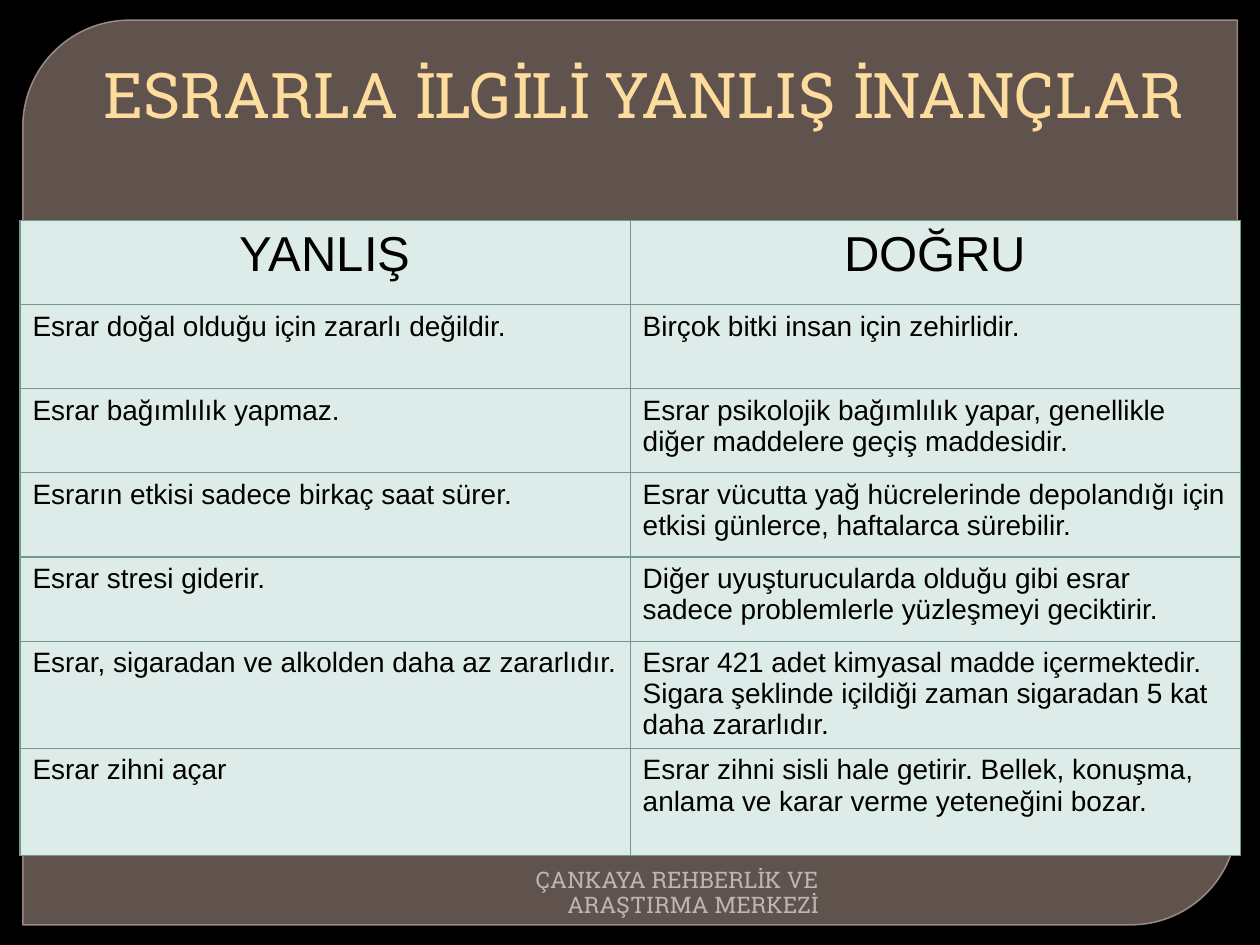
"""Build the slide on false beliefs about cannabis and the facts."""
from dataclasses import dataclass

import lxml.etree
import pptx
import pptx.dml.color
import pptx.enum.shapes
import pptx.enum.text
import pptx.oxml.ns
import pptx.util

Pt = pptx.util.Pt
qn = pptx.oxml.ns.qn
ALIGN = pptx.enum.text.PP_ALIGN
ANCHOR = pptx.enum.text.MSO_ANCHOR


@dataclass(frozen=True)
class Style:
    font: str
    size: float
    color: str
    align: ALIGN


@dataclass(frozen=True)
class Belief:
    wrong: str
    right: str
    height: float
    style: Style


TITLE = Style("Roboto Slab", 36, "FDDC9E", ALIGN.RIGHT)
FOOTER = Style("Roboto Slab", 13, "C0B5B1", ALIGN.RIGHT)
HEAD = Style("Arial", 28, "000000", ALIGN.CENTER)
BODY = Style("Arial", 16, "000000", ALIGN.LEFT)

BELIEFS = [
    Belief("YANLIŞ", "DOĞRU", 48.1, HEAD),
    Belief("Esrar doğal olduğu için zararlı değildir.",
           "Birçok bitki insan için zehirlidir.", 48.1, BODY),
    Belief("Esrar bağımlılık yapmaz.",
           "Esrar psikolojik bağımlılık yapar, genellikle diğer maddelere geçiş maddesidir.",
           48.1, BODY),
    Belief("Esrarın etkisi sadece birkaç saat sürer.",
           "Esrar vücutta yağ hücrelerinde depolandığı için etkisi günlerce, "
           "haftalarca sürebilir.", 48.1, BODY),
    Belief("Esrar stresi giderir.",
           "Diğer uyuşturucularda olduğu gibi esrar sadece problemlerle yüzleşmeyi geciktirir.",
           48.1, BODY),
    Belief("Esrar, sigaradan ve alkolden daha az zararlıdır.",
           "Esrar 421 adet kimyasal madde içermektedir. Sigara şeklinde içildiği zaman "
           "sigaradan 5 kat daha zararlıdır.", 61.3, BODY),
    Belief("Esrar zihni açar",
           "Esrar zihni sisli hale getirir. Bellek, konuşma, anlama ve karar verme "
           "yeteneğini bozar.", 61.3, BODY),
]


def rgb(color: str) -> pptx.dml.color.RGBColor:
    return pptx.dml.color.RGBColor.from_string(color)


def paint(fill, color: str, alpha: int = 100) -> None:
    fill.solid()
    fill.fore_color.rgb = rgb(color)
    if alpha < 100:
        clr = fill._xPr.find(f"{qn('a:solidFill')}/{qn('a:srgbClr')}")
        lxml.etree.SubElement(clr, qn("a:alpha"), val=str(alpha * 1000))


def write(tf, text: str, style: Style):
    p = tf.paragraphs[0]
    p.alignment = style.align
    r = p.add_run()
    r.text = text
    r.font.name = style.font
    r.font.size = Pt(style.size)
    r.font.color.rgb = rgb(style.color)
    return p


def add_borders(cell, color: str, width: float) -> None:
    pr = cell._tc.get_or_add_tcPr()
    for i, side in enumerate(("lnL", "lnR", "lnT", "lnB")):
        ln = lxml.etree.Element(qn(f"a:{side}"), w=str(Pt(width)))
        fill = lxml.etree.SubElement(ln, qn("a:solidFill"))
        lxml.etree.SubElement(fill, qn("a:srgbClr"), val=color)
        pr.insert(i, ln)


def add_panel(s) -> None:
    sp = s.shapes.add_shape(pptx.enum.shapes.MSO_SHAPE.ROUND_2_DIAG_RECTANGLE,
                            Pt(13), Pt(11.5), Pt(694), Pt(517))
    sp.adjustments[0] = 0.118
    sp.adjustments[1] = 0
    sp.shadow.inherit = False
    paint(sp.fill, "948079", 65)
    paint(sp.line.fill, "A9948D", 88)
    sp.line.width = Pt(0.87)
    s.shapes._spTree.insert(2, sp._element)


def add_title(s, text: str) -> None:
    sp = s.shapes.title
    sp.left, sp.top, sp.width, sp.height = Pt(36), Pt(21.6), Pt(648), Pt(56.9)
    tf = sp.text_frame
    tf.word_wrap = True
    tf.auto_size = pptx.enum.text.MSO_AUTO_SIZE.NONE
    tf.vertical_anchor = ANCHOR.BOTTOM
    tf.margin_left = 0
    write(tf, text, TITLE)


def add_beliefs(s, beliefs: list[Belief]) -> None:
    height = sum(b.height for b in beliefs)
    tbl = s.shapes.add_table(len(beliefs), 2, Pt(11.4), Pt(126),
                             Pt(697.4), Pt(height)).table
    tbl.first_row = tbl.horz_banding = False
    for row, b in zip(tbl.rows, beliefs):
        row.height = Pt(b.height)
        for cell, text in zip(row.cells, (b.wrong, b.right)):
            paint(cell.fill, "DEECE9")
            add_borders(cell, "70988E", 0.75)
            write(cell.text_frame, text, b.style)


def add_footer(s, text: str) -> None:
    tf = s.shapes.add_textbox(Pt(246.2), Pt(491.8), Pt(228.2), Pt(37.4)).text_frame
    tf.word_wrap = True
    tf.vertical_anchor = ANCHOR.MIDDLE
    write(tf, text, FOOTER).line_spacing = 0.9


def main() -> None:
    prs = pptx.Presentation()
    prs.slide_width, prs.slide_height = Pt(720), Pt(540)
    s = prs.slides.add_slide(prs.slide_layouts[5])
    paint(s.background.fill, "000000")
    add_panel(s)
    add_title(s, "ESRARLA İLGİLİ YANLIŞ İNANÇLAR")
    add_beliefs(s, BELIEFS)
    add_footer(s, "ÇANKAYA REHBERLİK VE ARAŞTIRMA MERKEZİ")
    prs.save("out.pptx")


if __name__ == "__main__":
    main()
